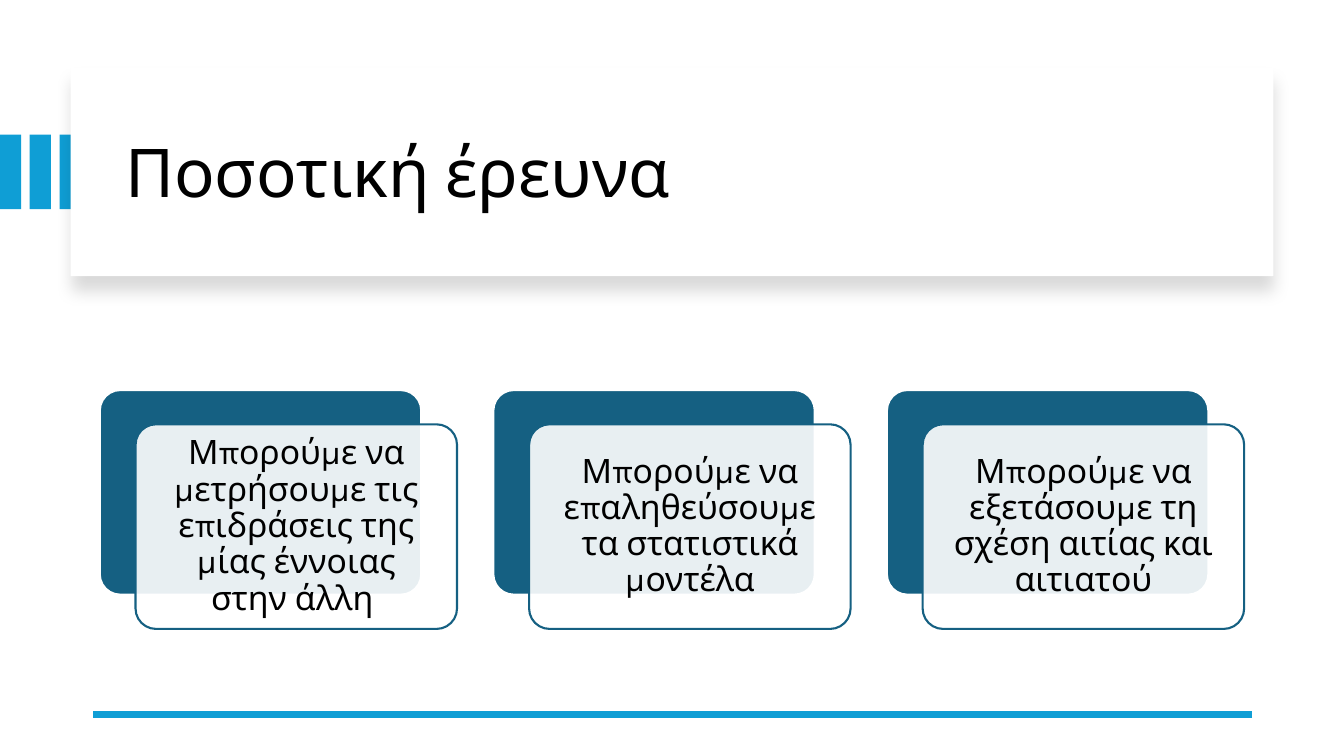
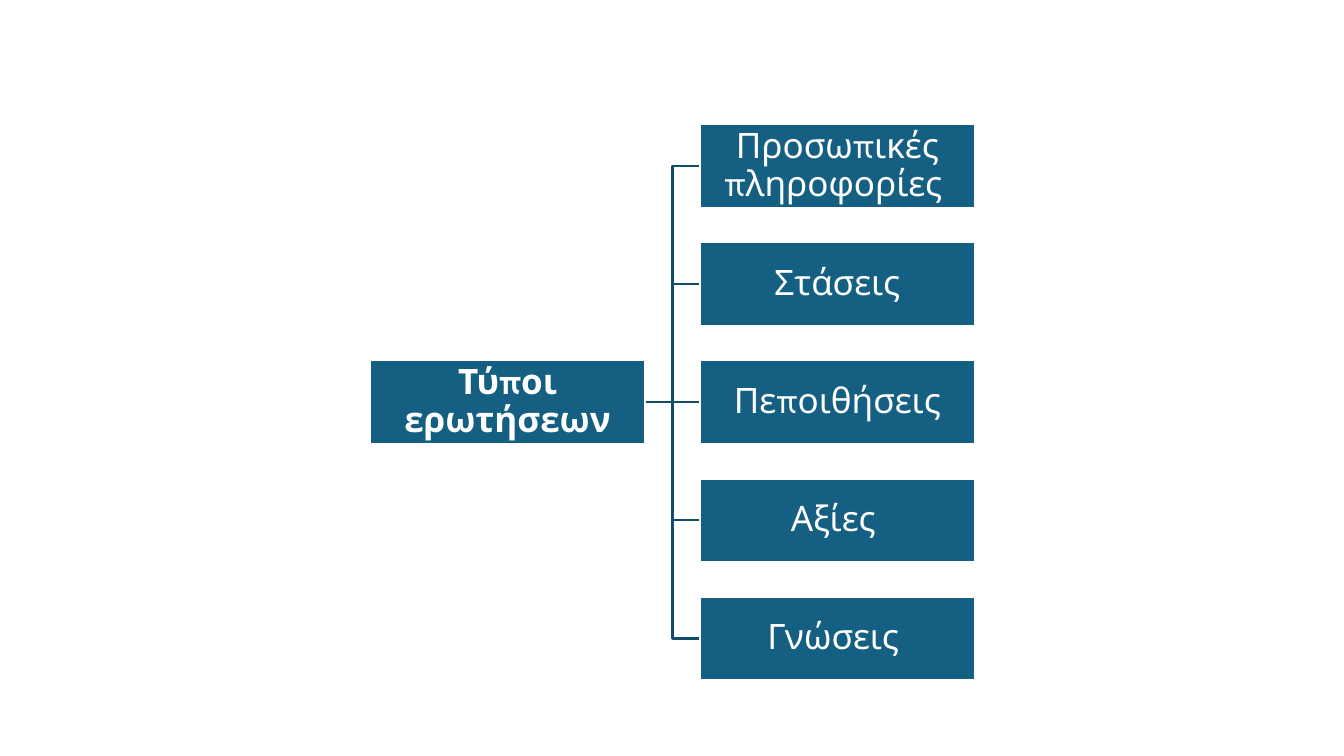
from lxml.etree import SubElement
from pptx import Presentation
from pptx.dml.color import RGBColor
from pptx.enum.shapes import MSO_CONNECTOR as CONN, MSO_SHAPE as SHAPE
from pptx.enum.text import MSO_ANCHOR, MSO_AUTO_SIZE, PP_ALIGN
from pptx.oxml.ns import qn
from pptx.util import Inches, Pt

COLORS = {"accent": "0F9ED5", "box": "156082", "branch": "114D68",
          "white": "FFFFFF", "black": "000000"}
FONT = "Karla"
W, H = 13.33, 7.5
TITLE_ONLY, BLANK = 5, 6


def rgb(name):
    return RGBColor.from_string(COLORS[name])


def add_box(slide, box, fill, line=None, kind=SHAPE.RECTANGLE):
    sp = slide.shapes.add_shape(kind, *map(Inches, box))
    sp.shadow.inherit = False
    sp.fill.solid()
    sp.fill.fore_color.rgb = rgb(fill)
    if line:
        sp.line.color.rgb = rgb(line)
        sp.line.width = Pt(1.5)
    else:
        sp.line.fill.background()
    if kind == SHAPE.ROUNDED_RECTANGLE:
        sp.adjustments[0] = 0.1
    return sp


def write(sp, text, size, color, inset=0.1, align=PP_ALIGN.CENTER, bold=False):
    tf = sp.text_frame
    tf.word_wrap = True
    tf.auto_size = MSO_AUTO_SIZE.NONE
    tf.vertical_anchor = MSO_ANCHOR.MIDDLE
    tf.margin_left = tf.margin_right = Inches(inset)
    tf.margin_top = tf.margin_bottom = Inches(inset)
    p = tf.paragraphs[0]
    p.text = text
    p.alignment = align
    p.line_spacing = 0.9
    p.font.name = FONT
    p.font.size = Pt(size)
    p.font.bold = bold
    p.font.color.rgb = rgb(color)


def add_line(slide, start, end, color, width, kind=CONN.STRAIGHT):
    line = slide.shapes.add_connector(kind, *map(Inches, (*start, *end)))
    line.line.color.rgb = rgb(color)
    line.line.width = Pt(width)
    SubElement(line._element.spPr, qn("a:effectLst"))
    return line


def set_alpha(color_element, percent):
    SubElement(color_element, qn("a:alpha"), val=str(percent * 1000))


def cast_shadow(sp, alpha, blur, distance):
    effects = sp._element.spPr.find(qn("a:effectLst"))
    shadow = SubElement(effects, qn("a:outerShdw"), blurRad=str(Pt(blur)),
                        dist=str(Pt(distance)), dir="5400000", algn="t", rotWithShape="0")
    set_alpha(SubElement(shadow, qn("a:srgbClr"), val=COLORS["black"]), alpha)


def title_band(slide, box, text):
    x, y, w, h = box
    bar_w, bar_h, pitch = 0.21, 0.74, 0.295
    for i in range(3):
        add_box(slide, (i * pitch, y + (h - bar_h) / 2, bar_w, bar_h), "accent")
    cast_shadow(add_box(slide, box, "white"), alpha=15, blur=11, distance=10)
    title = slide.shapes.title
    title.left, title.top = Inches(x + 0.44), Inches(y + 0.22)
    title.width, title.height = Inches(w - 0.8), Inches(h - 0.37)
    write(title, text, 48, "black", align=PP_ALIGN.LEFT)
    slide.shapes._spTree.append(title._element)


def card_row(slide, box, texts):
    x, y, w, h = box
    shift_x, shift_y, gap = 0.355, 0.34, 0.36
    pitch = (w + gap) / len(texts)
    card_w, card_h = pitch - gap - shift_x, h - shift_y
    for i, text in enumerate(texts):
        left = x + i * pitch
        add_box(slide, (left, y, card_w, card_h), "box", "white", SHAPE.ROUNDED_RECTANGLE)
        card = add_box(slide, (left + shift_x, y + shift_y, card_w, card_h),
                       "white", "box", SHAPE.ROUNDED_RECTANGLE)
        set_alpha(card._element.spPr.find(qn("a:solidFill"))[0], 90)
        write(card, text, 24, "black", inset=0.16)


def tree(slide, box, root_text, leaf_texts):
    x, y, w, h = box
    node_w, node_h = 2.73, 0.83
    pitch = (h - node_h) / (len(leaf_texts) - 1)
    leaf_x, root_y = x + w - node_w, y + (h - node_h) / 2

    def node(left, top, text, bold=False):
        sp = add_box(slide, (left, top, node_w, node_h), "box", "white")
        write(sp, text, 25, "white", inset=0.02, bold=bold)
        return sp

    root = node(x, root_y, root_text, bold=True)
    start = (x + node_w, root_y + node_h / 2)
    for i, text in enumerate(leaf_texts):
        top = y + i * pitch
        leaf = node(leaf_x, top, text)
        level = abs(top - root_y) < 0.01
        branch = add_line(slide, start, (leaf_x, top + node_h / 2), "branch", 1.5,
                          CONN.STRAIGHT if level else CONN.ELBOW)
        branch.begin_connect(root, 3)
        branch.end_connect(leaf, 1)
        slide.shapes._spTree.insert(2, branch._element)


def quantitative_slide(prs):
    slide = prs.slides.add_slide(prs.slide_layouts[TITLE_ONLY])
    title_band(slide, (0.7, 0.67, 11.93, 2.07), "Ποσοτική έρευνα")
    add_line(slide, (W - 0.91, 7.09), (0.92, 7.09), "accent", 4.5)
    card_row(slide, (0.99, 3.87, 11.35, 2.37), [
        "Μπορούμε να μετρήσουμε τις επιδράσεις της μίας έννοιας στην άλλη ",
        "Μπορούμε να επαληθεύσουμε τα στατιστικά μοντέλα",
        "Μπορούμε να εξετάσουμε τη σχέση αιτίας και αιτιατού",
    ])


def question_types_slide(prs):
    slide = prs.slides.add_slide(prs.slide_layouts[BLANK])
    tree(slide, (3.67, 1.23, 6, 5.52), "Τύποι ερωτήσεων", [
        "Προσωπικές πληροφορίες ", "Στάσεις", "Πεποιθήσεις", "Αξίες ", "Γνώσεις "])


def main():
    prs = Presentation()
    prs.slide_width, prs.slide_height = Inches(W), Inches(H)
    quantitative_slide(prs)
    question_types_slide(prs)
    prs.save("out.pptx")


if __name__ == "__main__":
    main()
